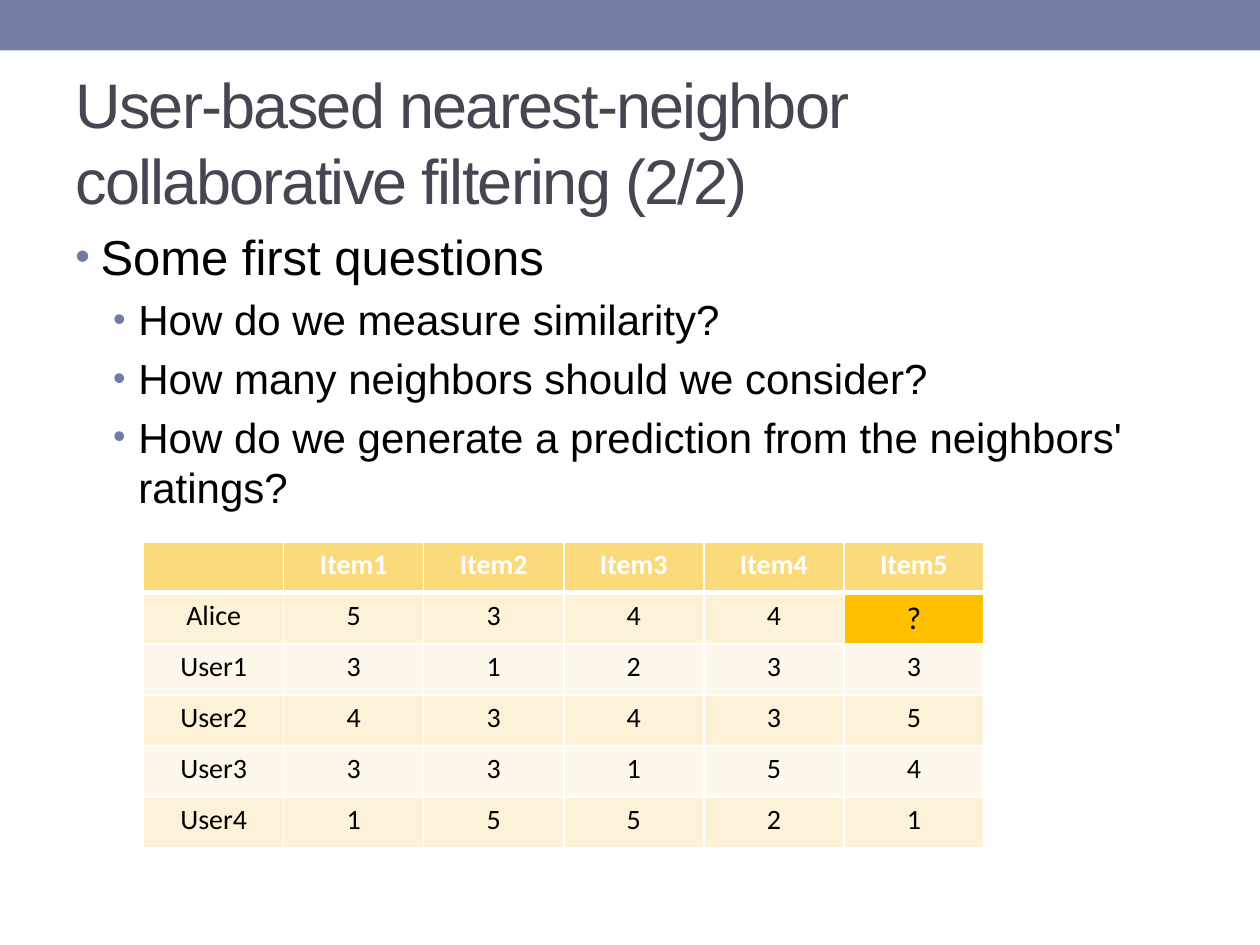
from lxml.etree import SubElement
from pptx import Presentation
from pptx.dml.color import RGBColor
from pptx.enum.shapes import MSO_SHAPE as Shape
from pptx.enum.text import MSO_ANCHOR as Anchor, PP_ALIGN as Align
from pptx.oxml.ns import qn
from pptx.util import Inches, Pt

SLATE = RGBColor(0x72, 0x7C, 0xA3)
TITLE_GREY = RGBColor(0x46, 0x46, 0x53)
BLACK = RGBColor(0, 0, 0)
WHITE = RGBColor(255, 255, 255)
HEADER_GOLD = RGBColor(0xFA, 0xDA, 0x7A)
BANDS = (RGBColor(0xFD, 0xF1, 0xD7), RGBColor(0xFE, 0xF8, 0xEC))
HIGHLIGHT = RGBColor(0xFF, 0xC0, 0x00)

COLUMNS, ROWS = 20, 15

QUESTIONS = [
    (0, "Some first questions"),
    (1, "How do we measure similarity?"),
    (1, "How many neighbors should we consider?"),
    (1, "How do we generate a prediction from the neighbors' ratings?"),
]
RATINGS = [
    ["", "Item1", "Item2", "Item3", "Item4", "Item5"],
    ["Alice", 5, 3, 4, 4, "?"],
    ["User1", 3, 1, 2, 3, 3],
    ["User2", 4, 3, 4, 3, 5],
    ["User3", 3, 3, 1, 5, 4],
    ["User4", 1, 5, 5, 2, 1],
]


def add_node(parent, tag, **attributes):
    return SubElement(parent, qn(tag), {key: str(value) for key, value in attributes.items()})


class SlideBuilder:
    """Places styled elements on a slide, measured in grid columns and rows."""

    text_font, table_font = "Arial", "Calibri"
    level_sizes = (28, 24)
    level_indents = (0.2, 0.5)

    def __init__(self, deck):
        self.slide = deck.slides.add_slide(deck.slide_layouts[6])
        self.column = deck.slide_width / COLUMNS
        self.row = deck.slide_height / ROWS

    def area(self, left, top, width, height):
        return (int(left * self.column), int(top * self.row),
                int(width * self.column), int(height * self.row))

    def style(self, para, font, size, color, bold=False):
        for span in para.runs:
            span.font.name, span.font.size, span.font.bold = font, Pt(size), bold
            span.font.color.rgb = color

    def bar(self, *place):
        bar = self.slide.shapes.add_shape(Shape.RECTANGLE, *self.area(*place))
        bar.shadow.inherit = False
        bar.fill.solid()
        bar.fill.fore_color.rgb = SLATE
        bar.line.fill.background()

    def text_frame(self, place, anchor):
        frame = self.slide.shapes.add_textbox(*self.area(*place)).text_frame
        frame.word_wrap = True
        frame.vertical_anchor = anchor
        return frame

    def title(self, text, *place):
        frame = self.text_frame(place, Anchor.MIDDLE)
        frame.text = text
        para = frame.paragraphs[0]
        self.style(para, self.text_font, 36, TITLE_GREY)
        para.runs[0].font._element.set("spc", "-100")

    def bullets(self, items, *place):
        frame = self.text_frame(place, Anchor.TOP)
        frame.text = "\n".join(text for _, text in items)
        for para, (level, _) in zip(frame.paragraphs, items):
            para.level = level
            self.style(para, self.text_font, self.level_sizes[level], BLACK)
            self.bullet(para, self.level_indents[level])

    def bullet(self, para, indent):
        """Give the paragraph a hanging bullet and space before of 20 %."""
        props = para._p.get_or_add_pPr()
        props.set("marL", str(Inches(indent)))
        props.set("indent", str(Inches(-0.2)))
        add_node(add_node(props, "a:spcBef"), "a:spcPct", val=20000)
        add_node(add_node(props, "a:buClr"), "a:srgbClr", val=SLATE)
        add_node(props, "a:buSzPct", val=85000)
        add_node(props, "a:buFont", typeface=self.text_font)
        add_node(props, "a:buChar", char="•")

    def table(self, rows, *place):
        frame = self.slide.shapes.add_table(len(rows), len(rows[0]), *self.area(*place))
        for y, values in enumerate(rows):
            for x, value in enumerate(values):
                self.cell(frame.table.cell(y, x), str(value), y)

    def cell(self, cell, text, y):
        header, unknown = y == 0, text == "?"
        cell.text = text
        para = cell.text_frame.paragraphs[0]
        para.alignment = Align.CENTER
        self.style(para, self.table_font, 18 if unknown else 16,
                   WHITE if header else BLACK, bold=header)
        self.borders(cell, top=3 if y == 1 else 1, bottom=3 if header else 1)
        cell.fill.solid()
        band = HEADER_GOLD if header else BANDS[(y - 1) % 2]
        cell.fill.fore_color.rgb = HIGHLIGHT if unknown else band

    def borders(self, cell, top, bottom):
        props = cell._tc.get_or_add_tcPr()
        for side, width in (("L", 1), ("R", 1), ("T", top), ("B", bottom)):
            line = add_node(props, f"a:ln{side}", w=Pt(width))
            add_node(add_node(line, "a:solidFill"), "a:srgbClr", val=WHITE)


def main():
    deck = Presentation()
    deck.slide_width, deck.slide_height = Inches(10), Inches(7.5)
    page = SlideBuilder(deck)
    page.bar(0, 0, COLUMNS, 0.8)
    page.title("User-based nearest-neighbor collaborative filtering (2/2)", 1, 1.16, 18, 2.16)
    page.bullets(QUESTIONS, 1, 3.5, 18, 10.66)
    page.table(RATINGS, 2.28, 8.6, 13.34, 4.86)
    deck.save("out.pptx")


if __name__ == "__main__":
    main()
